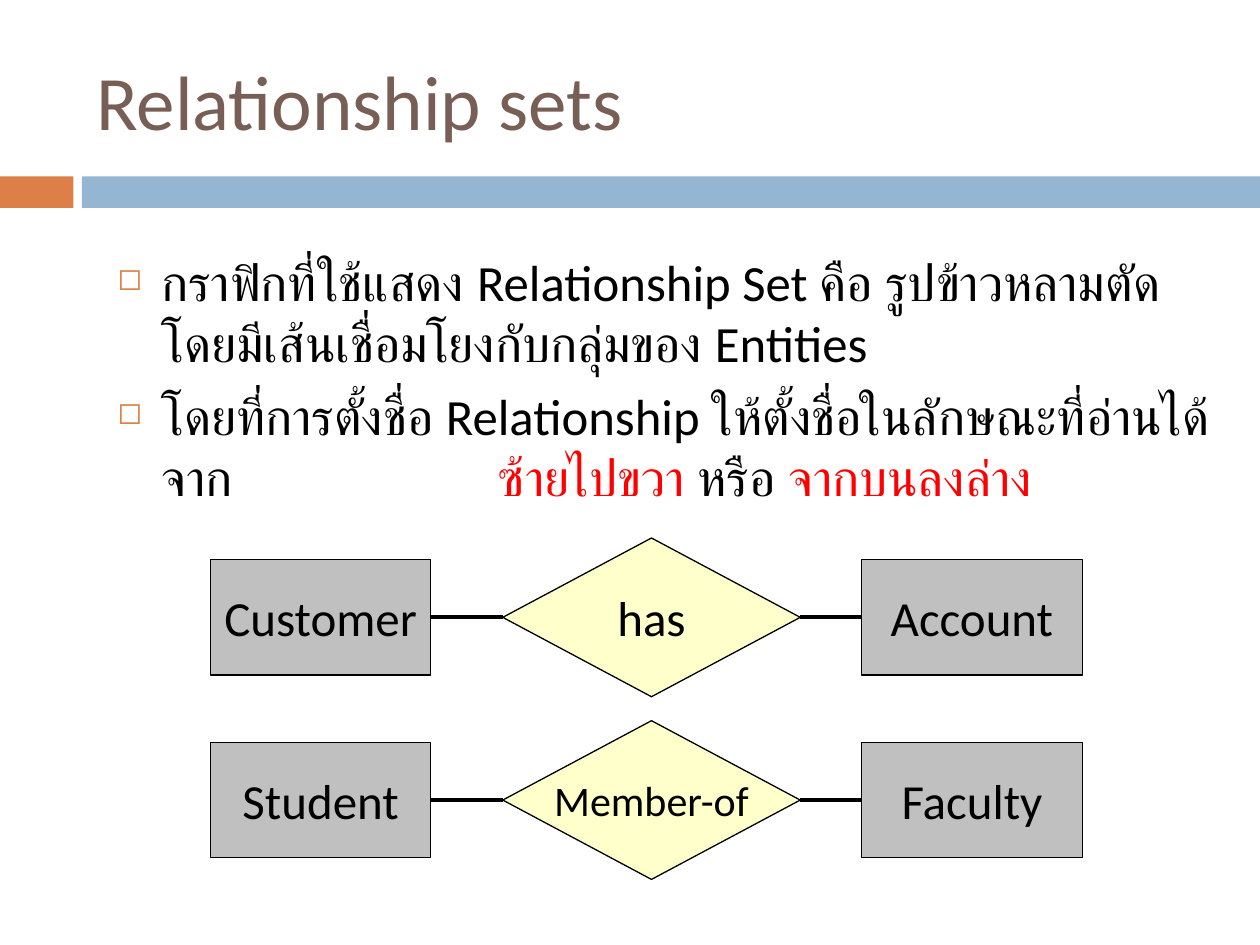
"""Build a slide on relationship sets with two entity-relationship diagrams."""
from lxml import etree
from pptx import Presentation
from pptx.dml.color import RGBColor
from pptx.enum.shapes import MSO_CONNECTOR, MSO_SHAPE
from pptx.enum.text import MSO_ANCHOR, PP_ALIGN
from pptx.oxml.ns import qn
from pptx.util import Pt

RECTANGLE, DIAMOND = MSO_SHAPE.RECTANGLE, MSO_SHAPE.DIAMOND
STRAIGHT = MSO_CONNECTOR.STRAIGHT
TOP, MIDDLE = MSO_ANCHOR.TOP, MSO_ANCHOR.MIDDLE
LEFT, CENTER = PP_ALIGN.LEFT, PP_ALIGN.CENTER

BLACK = RGBColor(0x00, 0x00, 0x00)
RED = RGBColor(0xFF, 0x00, 0x00)
BROWN = RGBColor(0x77, 0x5F, 0x55)
ORANGE = RGBColor(0xDD, 0x80, 0x47)
BLUE = RGBColor(0x94, 0xB6, 0xD2)
GRAY = RGBColor(0xC0, 0xC0, 0xC0)
YELLOW = RGBColor(0xFF, 0xFF, 0xCC)
FONT = "Calibri"

TITLE = "Relationship sets"
BULLETS = [
    [("กราฟิกที่ใช้แสดง Relationship Set คือ รูปข้าวหลามตัด "
      "โดยมีเส้นเชื่อมโยงกับกลุ่มของ Entities", BLACK)],
    [("โดยที่การตั้งชื่อ Relationship ให้ตั้งชื่อในลักษณะที่อ่านได้จาก\t", BLACK),
     ("ซ้ายไปขวา ", RED), ("หรือ ", BLACK), ("จากบนลงล่าง", RED)],
]
BANDS = [(0, 42, ORANGE), (46.8, 673.2, BLUE)]
DIAGRAMS = [
    (("Customer", 28), ("has", 28), ("Account", 28)),
    (("Student", 28), ("Member-of", 24), ("Faculty", 28)),
]
COLUMNS = [
    (RECTANGLE, 120.2, 126, 66, GRAY),
    (DIAMOND, 287.3, 170, 90.7, YELLOW),
    (RECTANGLE, 492.4, 126, 66, GRAY),
]
FIRST_MIDDLE, ROW_STEP = 352.8, 104.4
INDENT, TAB_STOP = 25.2, 217.5


def write_text(box, paragraphs, size, align=LEFT, anchor=TOP, wrap=True, before=0):
    frame = box.text_frame
    frame.word_wrap = wrap
    frame.vertical_anchor = anchor
    for index, spans in enumerate(paragraphs):
        para = frame.paragraphs[0] if index == 0 else frame.add_paragraph()
        para.alignment = align
        para.space_before = Pt(before)
        for text, color in spans:
            span = para.add_run()
            span.text = text
            span.font.name = FONT
            span.font.size = Pt(size)
            span.font.color.rgb = color
    return frame


def add_bullet(para):
    properties = para._p.get_or_add_pPr()
    properties.set("marL", str(Pt(INDENT)))
    properties.set("indent", str(-Pt(INDENT)))
    color = etree.SubElement(properties, qn("a:buClr"))
    etree.SubElement(color, qn("a:srgbClr"), val=str(ORANGE))
    etree.SubElement(properties, qn("a:buSzPct"), val="60000")
    etree.SubElement(properties, qn("a:buChar"), char="◻")
    tabs = etree.SubElement(properties, qn("a:tabLst"))
    etree.SubElement(tabs, qn("a:tab"), pos=str(Pt(TAB_STOP)), algn="l")


def add_box(page, kind, left, top, width, height, fill, outlined=True):
    box = page.shapes.add_shape(kind, Pt(left), Pt(top), Pt(width), Pt(height))
    box.shadow.inherit = False
    box.fill.solid()
    box.fill.fore_color.rgb = fill
    if outlined:
        box.line.color.rgb = BLACK
        box.line.width = Pt(0.75)
    else:
        box.line.fill.background()
    return box


def join(page, first, second):
    line = page.shapes.add_connector(STRAIGHT, 0, 0, 0, 0)
    line.begin_connect(first, 3)
    line.end_connect(second, 1)
    line.line.color.rgb = BLACK
    line.line.width = Pt(2.25)
    etree.SubElement(line._element.spPr, qn("a:effectLst"))


def add_diagram(page, labels, middle):
    boxes = []
    for (text, size), (kind, left, width, height, fill) in zip(labels, COLUMNS):
        box = add_box(page, kind, left, middle - height / 2, width, height, fill)
        write_text(box, [[(text, BLACK)]], size, align=CENTER, anchor=MIDDLE, wrap=False)
        boxes.append(box)
    for first, second in zip(boxes, boxes[1:]):
        join(page, first, second)


def main():
    deck = Presentation()
    deck.slide_width, deck.slide_height = Pt(720), Pt(540)
    page = deck.slides.add_slide(deck.slide_layouts[6])
    for left, width, color in BANDS:
        add_box(page, RECTANGLE, left, 100.8, width, 18, color, outlined=False)
    title = page.shapes.add_textbox(Pt(48), Pt(18), Pt(642), Pt(78))
    write_text(title, [[(TITLE, BROWN)]], 44, anchor=MIDDLE)
    body = page.shapes.add_textbox(Pt(60), Pt(139.7), Pt(642), Pt(215.3))
    for para in write_text(body, BULLETS, 29, before=7).paragraphs:
        add_bullet(para)
    for row, labels in enumerate(DIAGRAMS):
        add_diagram(page, labels, FIRST_MIDDLE + row * ROW_STEP)
    deck.save("out.pptx")


if __name__ == "__main__":
    main()
